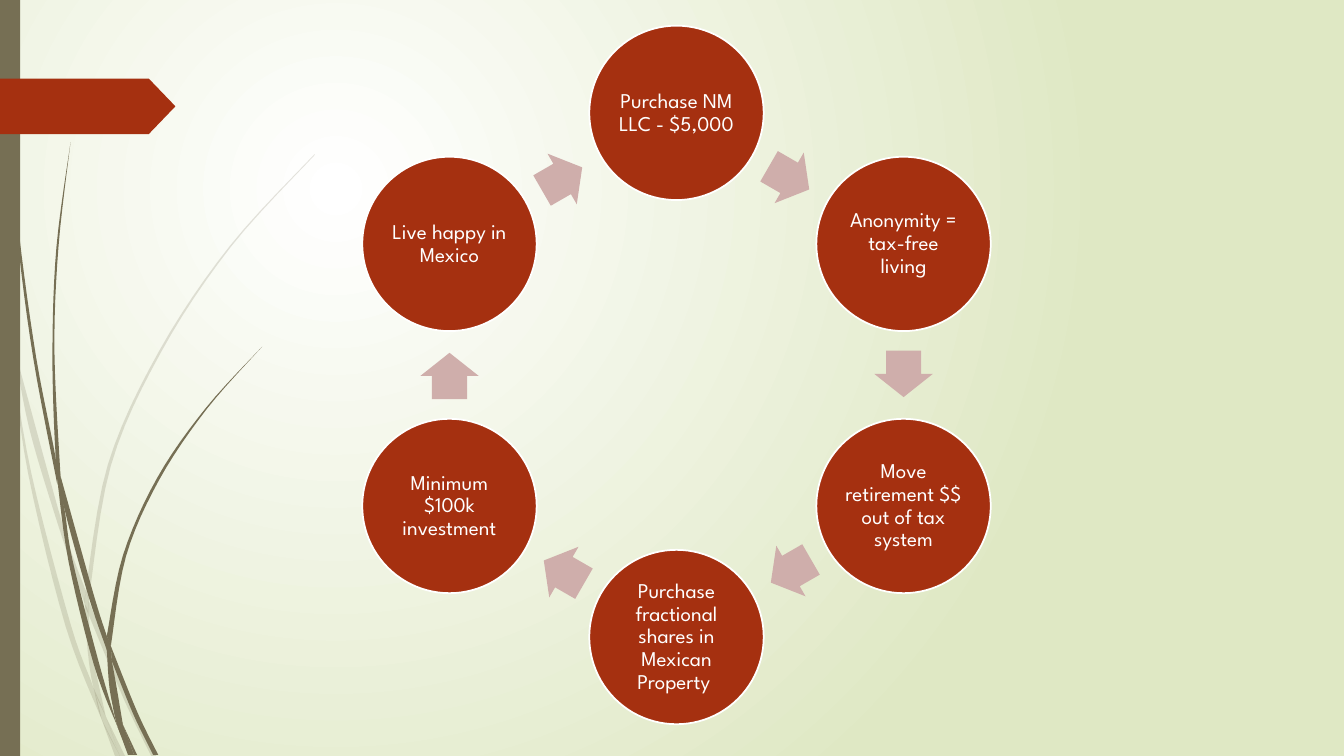
from dataclasses import dataclass
from math import cos, radians, sin

from lxml.etree import SubElement
from pptx import Presentation
from pptx.dml.color import RGBColor as Rgb
from pptx.enum.shapes import MSO_SHAPE as Preset
from pptx.enum.text import MSO_ANCHOR as Anchor, PP_ALIGN as Align
from pptx.oxml.ns import qn
from pptx.util import Inches, Pt


@dataclass(frozen=True)
class Theme:
    rust: str = "A53010"
    olive: str = "766F54"
    blush: str = "CFAEAB"
    white: str = "FFFFFF"
    sage: str = "DFE8C4"
    font: str = "League Spartan"
    label_size: float = 15
    outline: float = 1.25


def smooth(edge, steps=6):
    padded = [edge[0], *edge, edge[-1]]
    curve = []
    for a, b, c, d in zip(padded, padded[1:], padded[2:], padded[3:]):
        for step in range(steps):
            t = step / steps
            curve.append(tuple(
                q + t / 2 * (r - p + t * (2 * p - 5 * q + 4 * r - s + t * (3 * (q - r) + s - p)))
                for p, q, r, s in zip(a, b, c, d)))
    return curve + [edge[-1]]


class CycleSlide:
    """Draws on one slide with a theme, measuring in square grid cells."""

    def __init__(self, deck, theme, cell):
        self.theme = theme
        self.cell = cell
        self.slide = deck.slides.add_slide(deck.slide_layouts[6])

    def span(self, cells):
        return round(cells * self.cell)

    def paint(self, shape, colour, opacity=100):
        shape.shadow.inherit = False
        shape.fill.solid()
        shape.fill.fore_color.rgb = Rgb.from_string(colour)
        shape.line.fill.background()
        if opacity < 100:
            tint = shape.element.spPr.find(qn("a:solidFill"))[0]
            SubElement(tint, qn("a:alpha"), val=str(opacity * 1000))
        return shape

    def glow(self, inner, outer):
        fill = self.slide.background.fill
        fill.gradient()
        for stop, colour, position in zip(fill.gradient_stops, (inner, outer), (0, 1)):
            stop.color.rgb = Rgb.from_string(colour)
            stop.position = position
        gradient = self.slide.element.find(".//" + qn("a:gradFill"))
        gradient.remove(gradient.find(qn("a:lin")))
        circle = SubElement(gradient, qn("a:path"), path="circle")
        SubElement(circle, qn("a:fillToRect"), l="50000", t="50000", r="100000", b="100000")

    def preset(self, kind, left, top, width, height, colour):
        box = map(self.span, (left, top, width, height))
        return self.paint(self.slide.shapes.add_shape(kind, *box), colour)

    def blade(self, left_edge, right_edge, opacity):
        outline = smooth(left_edge) + smooth(right_edge)[::-1]
        points = [(self.span(x), self.span(y)) for x, y in outline]
        builder = self.slide.shapes.build_freeform(*points[0])
        builder.add_line_segments(points[1:], close=True)
        self.paint(builder.convert_to_shape(), self.theme.olive, opacity)

    def step(self, centre, size, label):
        x, y = centre
        disc = self.preset(Preset.OVAL, x - size / 2, y - size / 2, size, size, self.theme.rust)
        disc.line.color.rgb = Rgb.from_string(self.theme.white)
        disc.line.width = Pt(self.theme.outline)
        frame = disc.text_frame
        frame.word_wrap = True
        frame.vertical_anchor = Anchor.MIDDLE
        frame.margin_left = frame.margin_right = self.span(0.02)
        frame.margin_top = frame.margin_bottom = self.span(0.02)
        frame.text = label
        paragraph = frame.paragraphs[0]
        paragraph.alignment = Align.CENTER
        paragraph.line_spacing = 0.9
        font = paragraph.runs[0].font
        font.name = self.theme.font
        font.size = Pt(self.theme.label_size)
        font.color.rgb = Rgb.from_string(self.theme.white)

    def arrow(self, centre, width, height, turn):
        x, y = centre
        pointer = self.preset(Preset.RIGHT_ARROW, x - width / 2, y - height / 2,
                              width, height, self.theme.blush)
        pointer.adjustments[0], pointer.adjustments[1] = 0.6, 0.5
        pointer.rotation = turn

    def cycle(self, labels, centre, radius, size, lag):
        sector = 360 / len(labels)
        gap_radius = radius * cos(radians(sector / 2))

        def around(distance, angle, back=0):
            turn = radians(angle)
            return (centre[0] + distance * sin(turn) - back * cos(turn),
                    centre[1] - distance * cos(turn) - back * sin(turn))

        for index, label in enumerate(labels):
            angle = index * sector
            gap = angle + sector / 2
            self.step(around(radius, angle), size, label)
            self.arrow(around(gap_radius, gap, lag), 0.46, 0.58, gap)


STEPS = [
    "Purchase NM LLC - $5,000",
    "Anonymity = tax-free living",
    "Move retirement $$ out of tax system",
    "Purchase fractional shares in Mexican Property ",
    "Minimum $100k investment",
    "Live happy in Mexico",
]

PALE_BLADES = [
    ([(0, 2.99), (0.11, 3.5)], [(0, 2.82), (0.09, 3.22), (0.11, 3.5)]),
    ([(0.14, 3.45), (0.29, 4.25), (0.58, 5.22), (0.84, 5.99)],
     [(0.14, 3.45), (0.62, 5.2), (0.85, 5.86)]),
    ([(0.88, 6.1), (1.23, 6.94), (1.5, 7.5)], [(0.88, 5.96), (1.27, 6.92), (1.55, 7.5)]),
    ([(1.05, 7.11), (1.19, 7.5)], [(1.05, 7.11), (1.24, 7.5)]),
    ([(0.11, 3.5), (0.28, 4.7), (0.65, 6.21), (1.01, 7.14)],
     [(0.11, 3.5), (0.31, 4.69), (0.7, 6.19), (0.93, 6.83), (1.01, 7.14)]),
    ([(0.84, 5.99), (0.87, 6.46), (0.93, 6.83), (1.05, 7.11)],
     [(0.84, 5.99), (0.88, 6.1), (0.91, 6.46), (1.05, 7.11)]),
    ([(3.12, 1.53), (2.28, 2.44), (1.58, 3.48), (1.07, 4.61), (0.85, 5.86)],
     [(3.12, 1.54), (2.29, 2.45), (1.6, 3.49), (1.1, 4.62), (0.88, 5.96)]),
    ([(1.01, 7.14), (1.14, 7.5)], [(1.01, 7.14), (1.19, 7.5)]),
    ([(0.85, 5.86), (0.84, 5.99), (0.88, 6.1)], [(0.85, 5.86), (0.88, 5.96), (0.88, 6.1)]),
    ([(0.93, 6.83), (1.01, 7.14), (1.19, 7.5)], [(0.93, 6.83), (1.05, 7.11), (1.19, 7.5)]),
]

DARK_BLADES = [
    ([(0.03, 0), (0.07, 1.1), (0.17, 2.33), (0.33, 3.55), (0.57, 4.81)],
     [(0.04, 0), (0.08, 1.09), (0.19, 2.32), (0.36, 3.55), (0.55, 4.53), (0.57, 4.81)]),
    ([(0.6, 4.72), (0.64, 5.05), (0.88, 5.92), (1.06, 6.45)],
     [(0.6, 4.72), (0.93, 5.9), (1.06, 6.31)]),
    ([(1.11, 6.56), (1.32, 7.08), (1.52, 7.49)], [(1.1, 6.41), (1.36, 7.06), (1.57, 7.49)]),
    ([(0.57, 4.77), (0.68, 5.57), (0.93, 6.59), (1.17, 7.22)],
     [(0.57, 4.77), (0.64, 5.05), (0.72, 5.56), (0.98, 6.57), (1.17, 7.22)]),
    ([(0.7, 1.41), (0.56, 2.45), (0.52, 3.49), (0.55, 4.49), (0.6, 4.72)],
     [(0.7, 1.41), (0.58, 2.45), (0.54, 3.49), (0.6, 4.72)]),
    ([(1.22, 7.19), (1.33, 7.49)], [(1.22, 7.19), (1.36, 7.49)]),
    ([(0.55, 4.49), (0.57, 4.77), (0.64, 5.05)], [(0.55, 4.49), (0.6, 4.72), (0.64, 5.05)]),
    ([(2.6, 3.44), (2.04, 4.05), (1.56, 4.74), (1.22, 5.51), (1.06, 6.31)],
     [(2.6, 3.44), (2.05, 4.06), (1.58, 4.76), (1.25, 5.52), (1.1, 6.41)]),
    ([(1.17, 7.22), (1.27, 7.49)], [(1.17, 7.22), (1.31, 7.49)]),
    ([(1.06, 6.45), (1.1, 6.91), (1.22, 7.19)], [(1.06, 6.45), (1.11, 6.56), (1.22, 7.19)]),
    ([(1.06, 6.31), (1.06, 6.45), (1.11, 6.56)], [(1.06, 6.31), (1.1, 6.41), (1.11, 6.56)]),
    ([(1.1, 6.91), (1.17, 7.22), (1.3, 7.49)], [(1.1, 6.91), (1.22, 7.19), (1.33, 7.49)]),
]


def main():
    deck = Presentation()
    deck.slide_width, deck.slide_height = Inches(13.33), Inches(7.5)
    theme = Theme()
    page = CycleSlide(deck, theme, Inches(1))
    page.glow(theme.white, theme.sage)
    for blades, opacity in ((PALE_BLADES, 20), (DARK_BLADES, 100)):
        for left_edge, right_edge in blades:
            page.blade(left_edge, right_edge, opacity)
    page.preset(Preset.RECTANGLE, 0, 0, 0.2, 7.5, theme.olive)
    ribbon = page.preset(Preset.PENTAGON, 0, 0.78, 1.74, 0.55, theme.rust)
    ribbon.adjustments[0] = 0.48
    page.cycle(STEPS, centre=(6.71, 3.72), radius=2.6, size=1.73, lag=0.01)
    deck.save("out.pptx")


if __name__ == "__main__":
    main()
